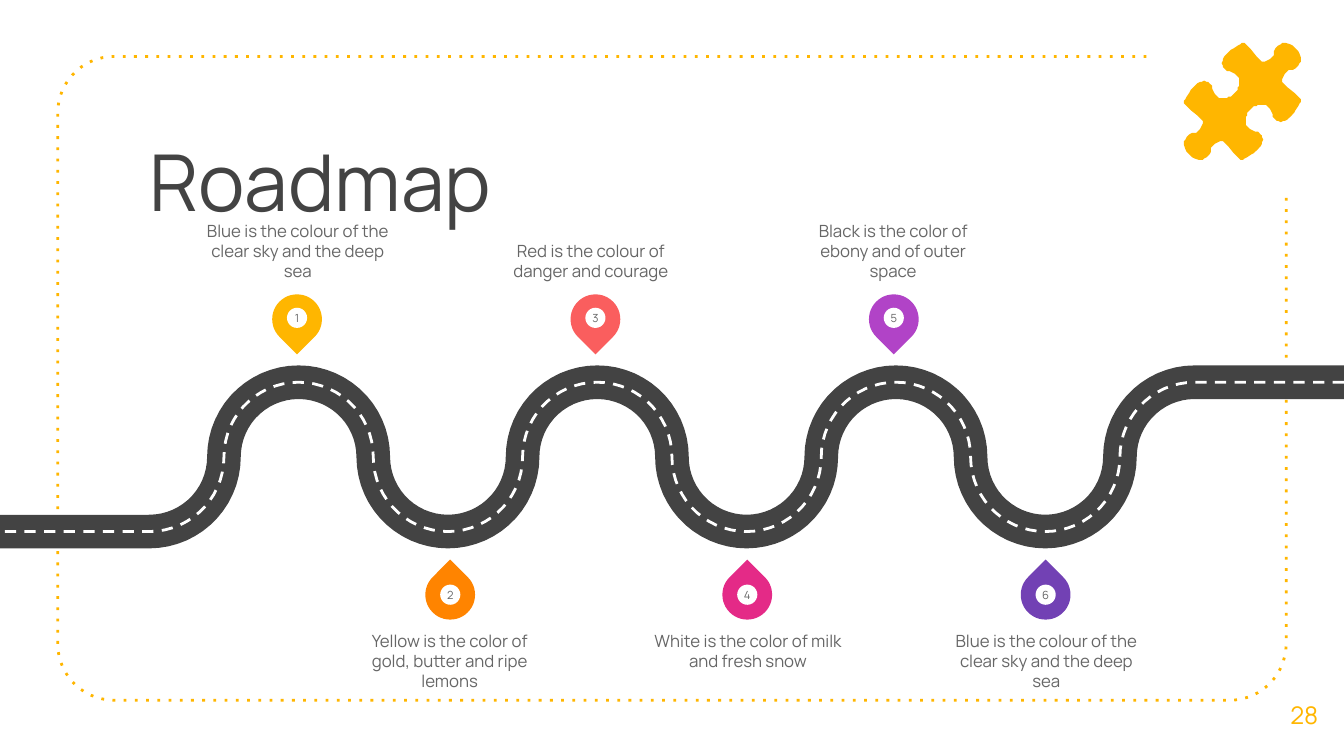
"""Build a roadmap slide with a winding road, six numbered pins and a puzzle piece."""
import math
from typing import NamedTuple

from lxml import etree
from pptx import Presentation
from pptx import util as u
from pptx.dml import color
from pptx.enum import dml, shapes, text
from pptx.oxml import ns

FONT = "Manrope"
YELLOW, DARK, GREY, WHITE = "FFB600", "434343", "666666", "FFFFFF"
WIDTH = 10
HEIGHT = WIDTH * 9 / 16
STEP = WIDTH / 9
ROAD_MIDDLE = 3.4
PIN_SIZE, DOT_SIZE = 0.37, 0.15
CAPTION_WIDTH, CAPTION_HEIGHT = 1.41, 0.58

Point = tuple[float, float]


class Milestone(NamedTuple):
    number: int
    center: float
    caption_left: float
    fill: str
    caption: str


class Side(NamedTuple):
    pin_top: float
    dot_top: float
    caption_top: float
    rotation: int
    anchor: text.MSO_ANCHOR


ABOVE = Side(2.19, 2.29, 1.51, 135, text.MSO_ANCHOR.BOTTOM)
BELOW = Side(4.24, 4.35, 4.69, 315, text.MSO_ANCHOR.TOP)

MILESTONES = [
    Milestone(1, 2.21, 1.51, YELLOW, "Blue is the colour of the clear sky and the deep sea"),
    Milestone(2, 3.35, 2.64, "FF8400", "Yellow is the color of gold, butter and ripe lemons"),
    Milestone(3, 4.43, 3.69, "FA5E5E", "Red is the colour of danger and courage"),
    Milestone(4, 5.56, 4.86, "E42A87", "White is the color of milk and fresh snow"),
    Milestone(5, 6.65, 5.94, "B143C7", "Black is the color of ebony and of outer space"),
    Milestone(6, 7.78, 7.08, "7241B4", "Blue is the colour of the clear sky and the deep sea"),
]

PUZZLE_LEFT, PUZZLE_TOP, PUZZLE_SIZE = 8.81, 0.32, 87
PUZZLE_QUARTER = [
    (38, 37), (39, 36), (40, 35), (40, 33), (41, 32), (41, 30), (41, 28), (41, 26),
    (40, 25), (39, 24), (38, 23), (36, 22), (34, 21), (32, 21), (31, 20), (30, 19),
    (29, 18), (29, 17), (28, 15), (29, 13), (29, 12), (30, 10), (32, 8), (33, 7),
    (35, 5), (37, 4), (40, 2), (42, 1), (43, 0), (45, 0), (47, 2), (50, 5),
    (54, 10), (55, 11), (56, 12), (58, 14), (60, 14), (62, 13), (64, 12), (65, 11),
    (67, 9), (67, 6), (68, 4), (70, 2), (72, 1), (73, 0), (76, 0), (79, 1), (81, 2),
]


def rgb(value: str) -> color.RGBColor:
    return color.RGBColor.from_string(value)


def arc(x: float, y: float, radius: float, start: int, end: int) -> list[Point]:
    """Return points on an arc, in degrees counted counterclockwise from the right."""
    steps = max(1, abs(end - start) // 6)
    angles = [math.radians(start + (end - start) * i / steps) for i in range(steps + 1)]
    return [(x + radius * math.cos(a), y - radius * math.sin(a)) for a in angles]


def frame_points() -> list[Point]:
    left, top, right, bottom, radius = 0.43, 0.42, 9.57, 5.21, 0.42
    return [
        (8.53, top),
        *arc(left + radius, top + radius, radius, 90, 180),
        *arc(left + radius, bottom - radius, radius, 180, 270),
        *arc(right - radius, bottom - radius, radius, 270, 360),
        (right, 1.46),
    ]


def road_points() -> list[Point]:
    radius = STEP / 2
    points = [(WIDTH, ROAD_MIDDLE - radius)]
    for bend in range(8, 0, -1):
        direction = 1 if bend % 2 == 0 else -1
        start = 90 if bend == 8 else 0
        end = 90 if bend == 1 else 180
        points += arc(bend * STEP, ROAD_MIDDLE, radius, direction * start, direction * end)
    return points + [(0, ROAD_MIDDLE + radius)]


def puzzle_points() -> list[Point]:
    """Mirror one quarter of the piece, then turn the half by 180 degrees."""
    size = PUZZLE_SIZE
    half = PUZZLE_QUARTER + [(size - y, size - x) for x, y in reversed(PUZZLE_QUARTER)]
    whole = half + [(size - x, size - y) for x, y in half]
    return [(PUZZLE_LEFT + x / 100, PUZZLE_TOP + y / 100) for x, y in whole]


def add_outline(slide, points: list[Point], closed: bool = False):
    scaled = [(u.Inches(x), u.Inches(y)) for x, y in points]
    builder = slide.shapes.build_freeform(*scaled[0])
    builder.add_line_segments(scaled[1:], close=closed)
    shape = builder.convert_to_shape()
    shape.shadow.inherit = False
    return shape


def add_path(slide, points: list[Point], line: str, width: float, dash: str = "solid") -> None:
    shape = add_outline(slide, points)
    shape.fill.background()
    shape.line.color.rgb = rgb(line)
    shape.line.width = u.Pt(width)
    shape.line.dash_style = dml.MSO_LINE.DASH
    for preset in shape.element.iter(ns.qn("a:prstDash")):
        preset.set("val", dash)
        etree.SubElement(preset.getparent(), ns.qn("a:round"))


def fill_plain(shape, fill: str) -> None:
    shape.shadow.inherit = False
    shape.fill.solid()
    shape.fill.fore_color.rgb = rgb(fill)
    shape.line.fill.background()


def write(shape, content: str, size: float, ink: str, inset: float = 0,
          anchor=text.MSO_ANCHOR.TOP, align=text.PP_ALIGN.CENTER, wrap: bool = True) -> None:
    frame = shape.text_frame
    frame.auto_size = text.MSO_AUTO_SIZE.NONE
    frame.word_wrap = wrap
    frame.vertical_anchor = anchor
    frame.margin_left = frame.margin_right = u.Inches(inset)
    frame.margin_top = frame.margin_bottom = u.Inches(inset)
    paragraph = frame.paragraphs[0]
    paragraph.alignment = align
    run = paragraph.add_run()
    run.text = content
    run.font.name = FONT
    run.font.size = u.Pt(size)
    run.font.color.rgb = rgb(ink)


def box(left: float, top: float, width: float, height: float) -> list[u.Length]:
    return [u.Inches(value) for value in (left, top, width, height)]


def add_milestone(slide, milestone: Milestone) -> None:
    side = ABOVE if milestone.number % 2 else BELOW
    group = slide.shapes.add_group_shape()
    pin = group.shapes.add_shape(
        shapes.MSO_SHAPE.TEAR,
        *box(milestone.center - PIN_SIZE / 2, side.pin_top, PIN_SIZE, PIN_SIZE))
    pin.rotation = side.rotation
    fill_plain(pin, milestone.fill)
    dot = group.shapes.add_shape(
        shapes.MSO_SHAPE.OVAL,
        *box(milestone.center - DOT_SIZE / 2, side.dot_top, DOT_SIZE, DOT_SIZE))
    fill_plain(dot, WHITE)
    write(dot, str(milestone.number), 6, GREY, anchor=text.MSO_ANCHOR.MIDDLE, wrap=False)
    caption = slide.shapes.add_textbox(
        *box(milestone.caption_left, side.caption_top, CAPTION_WIDTH, CAPTION_HEIGHT))
    write(caption, milestone.caption, 9, GREY, anchor=side.anchor)


def main() -> None:
    presentation = Presentation()
    presentation.slide_width = u.Inches(WIDTH)
    presentation.slide_height = u.Inches(HEIGHT)
    slide = presentation.slides.add_slide(presentation.slide_layouts[5])

    title = slide.shapes.title
    title.left, title.top, title.width, title.height = box(1.01, 0.89, 7.97, 0.94)
    write(title, "Roadmap", 42, DARK, inset=0.1, align=text.PP_ALIGN.LEFT)

    add_path(slide, frame_points(), YELLOW, 1.5, "dot")
    number = slide.shapes.add_textbox(*box(9.41, 5.02, 0.59, 0.6))
    write(number, "28", 13, YELLOW, inset=0.1, anchor=text.MSO_ANCHOR.MIDDLE)

    add_path(slide, road_points(), DARK, 18)
    add_path(slide, road_points(), WHITE, 1.5, "dash")
    for milestone in MILESTONES:
        add_milestone(slide, milestone)
    fill_plain(add_outline(slide, puzzle_points(), closed=True), YELLOW)

    presentation.save("out.pptx")


if __name__ == "__main__":
    main()
